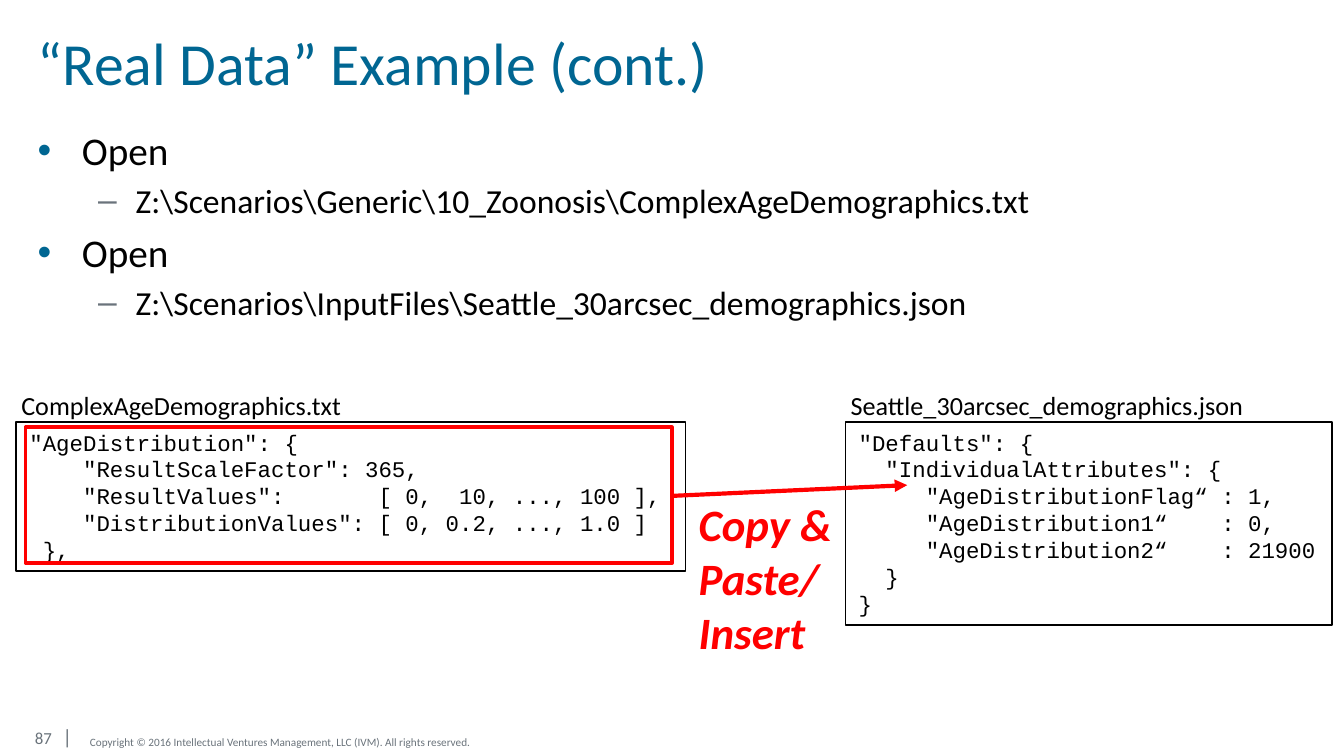
"""Build the slide on pasting age data into a demographics file."""
from dataclasses import dataclass

from lxml.etree import SubElement
from pptx import Presentation
from pptx.dml.color import RGBColor
from pptx.enum.shapes import MSO_CONNECTOR, MSO_SHAPE
from pptx.enum.text import MSO_ANCHOR, PP_ALIGN
from pptx.oxml.ns import qn
from pptx.util import Pt


@dataclass(frozen=True)
class Theme:
    sans: str = "Calibri"
    mono: str = "Courier New"
    blue: str = "006692"
    gray: str = "6A737B"
    black: str = "000000"
    white: str = "FFFFFF"
    red: str = "FF0000"
    title: int = 32
    callout: int = 24
    levels: tuple = (21, 18)
    label: int = 14
    code: int = 12
    bar: int = 11
    number: int = 9
    copyright: int = 6


THEME = Theme()
TITLE = "“Real Data” Example (cont.)"
STEPS = [
    (0, "Open"),
    (1, r"Z:\Scenarios\Generic\10_Zoonosis\ComplexAgeDemographics.txt"),
    (0, "Open"),
    (1, r"Z:\Scenarios\InputFiles\Seattle_30arcsec_demographics.json"),
]
BULLETS = [("•", THEME.blue, 23.76, 23.76), ("–", THEME.gray, 52.56, 20.16)]
FILES = [
    {
        "name": "ComplexAgeDemographics.txt",
        "label": (4.32, 205.2, 187.92, 24.48),
        "box": (8.64, 226.08, 358.56, 79.92),
        "fill": None,
        "wrap": False,
        "code": [
            '"AgeDistribution": {',
            '    "ResultScaleFactor": 365,',
            '    "ResultValues":       [ 0,  10, ..., 100 ],',
            '    "DistributionValues": [ 0, 0.2, ..., 1.0 ]',
            ' },',
        ],
    },
    {
        "name": "Seattle_30arcsec_demographics.json",
        "label": (448.56, 205.2, 231.12, 24.48),
        "box": (452.88, 226.08, 260.64, 108.72),
        "fill": THEME.white,
        "wrap": True,
        "code": [
            '"Defaults": {',
            '  "IndividualAttributes": {',
            '     "AgeDistributionFlag“ : 1,',
            '     "AgeDistribution1“    : 0,',
            '     "AgeDistribution2“    : 21900',
            '  }',
            '}',
        ],
    },
]
CALLOUT = ["Copy & Paste/", "Insert"]
PAGE_NUMBER = "87"
COPYRIGHT = "Copyright © 2016 Intellectual Ventures Management, LLC (IVM). All rights reserved."
HIGHLIGHT = (13.68, 228.96, 346.32, 72.72)
ARROW = (360, 265.68, 486, 259.92)


def points(values):
    return [Pt(value) for value in values]


def style(font, size, color, name=THEME.sans):
    font.size, font.name = Pt(size), name
    font.color.rgb = RGBColor.from_string(color)


def fill_text(shape, lines, size, color, name=THEME.sans, margins=(7.2, 3.6),
              anchor=MSO_ANCHOR.TOP, wrap=True):
    frame = shape.text_frame
    frame.margin_left = frame.margin_right = Pt(margins[0])
    frame.margin_top = frame.margin_bottom = Pt(margins[1])
    frame.vertical_anchor, frame.word_wrap = anchor, wrap
    for index, line in enumerate(lines):
        paragraph = frame.add_paragraph() if index else frame.paragraphs[0]
        paragraph.alignment = PP_ALIGN.LEFT
        paragraph.add_run().text = line
        style(paragraph.font, size, color, name)
    return frame


def add_text(slide, place, lines, size, color, **options):
    shape = slide.shapes.add_textbox(*points(place))
    return fill_text(shape, lines, size, color, **options)


def add_rectangle(slide, place, line, width, fill=None):
    shape = slide.shapes.add_shape(MSO_SHAPE.RECTANGLE, *points(place))
    shape.shadow.inherit = False
    if fill:
        shape.fill.solid()
        shape.fill.fore_color.rgb = RGBColor.from_string(fill)
    else:
        shape.fill.background()
    shape.line.color.rgb = RGBColor.from_string(line)
    shape.line.width = Pt(width)
    return shape


def add_steps(slide):
    frame = add_text(slide, (13.68, 64.8, 586.08, 144), [], THEME.levels[0],
                     THEME.black, margins=(6.48, 2.88))
    for index, (level, text) in enumerate(STEPS):
        paragraph = frame.add_paragraph() if index else frame.paragraphs[0]
        paragraph.text, paragraph.level = text, level
        size = THEME.levels[level]
        if index:
            paragraph.space_before = Pt(size * 0.2)
        mark, color, margin, hanging = BULLETS[level]
        properties = paragraph._p.get_or_add_pPr()
        properties.set("marL", str(Pt(margin)))
        properties.set("indent", str(-Pt(hanging)))
        bullet_color = SubElement(properties, qn("a:buClr"))
        SubElement(bullet_color, qn("a:srgbClr"), val=color)
        SubElement(properties, qn("a:buFont"), typeface="Arial")
        SubElement(properties, qn("a:buChar"), char=mark)
        style(paragraph.font, size, THEME.black)


def add_arrow(slide):
    arrow = slide.shapes.add_connector(MSO_CONNECTOR.STRAIGHT, *points(ARROW))
    arrow.line.color.rgb = RGBColor.from_string(THEME.red)
    arrow.line.width = Pt(2.25)
    SubElement(arrow.line._get_or_add_ln(), qn("a:tailEnd"), type="triangle")
    SubElement(arrow._element.spPr, qn("a:effectLst"))


def add_footer(slide):
    options = {"margins": (4.32, 2.16), "anchor": MSO_ANCHOR.MIDDLE}
    frame = add_text(slide, (14.4, 379.44, 30.24, 29.52), [], THEME.number,
                     THEME.gray, **options)
    paragraph = frame.paragraphs[0]
    tabs = SubElement(paragraph._p.get_or_add_pPr(), qn("a:tabLst"))
    SubElement(tabs, qn("a:tab"), pos=str(Pt(14.8)), algn="l")
    for text, size in ((PAGE_NUMBER + "\t", THEME.number), ("|", THEME.bar)):
        run = paragraph.add_run()
        run.text = text
        style(run.font, size, THEME.gray)
    add_text(slide, (43.92, 386.64, 228.24, 21.6), [COPYRIGHT], THEME.copyright,
             THEME.gray, **options)


def main():
    presentation = Presentation()
    presentation.slide_width, presentation.slide_height = Pt(720), Pt(405)
    slide = presentation.slides.add_slide(presentation.slide_layouts[6])
    add_footer(slide)
    add_text(slide, (13.68, 10.8, 648, 48.24), [TITLE], THEME.title, THEME.blue,
             margins=(6.48, 2.88))
    add_steps(slide)
    for file in FILES:
        box = add_rectangle(slide, file["box"], THEME.black, 0.75, file["fill"])
        fill_text(box, file["code"], THEME.code, THEME.black, name=THEME.mono,
                  wrap=file["wrap"])
        add_text(slide, file["label"], [file["name"]], THEME.label, THEME.black,
                 wrap=False)
    add_arrow(slide)
    callout = add_text(slide, (367.2, 262.8, 88.56, 94.32), CALLOUT, THEME.callout,
                       THEME.red)
    for paragraph in callout.paragraphs:
        paragraph.font.bold = paragraph.font.italic = True
    add_rectangle(slide, HIGHLIGHT, THEME.red, 2)
    presentation.save("out.pptx")


if __name__ == "__main__":
    main()
